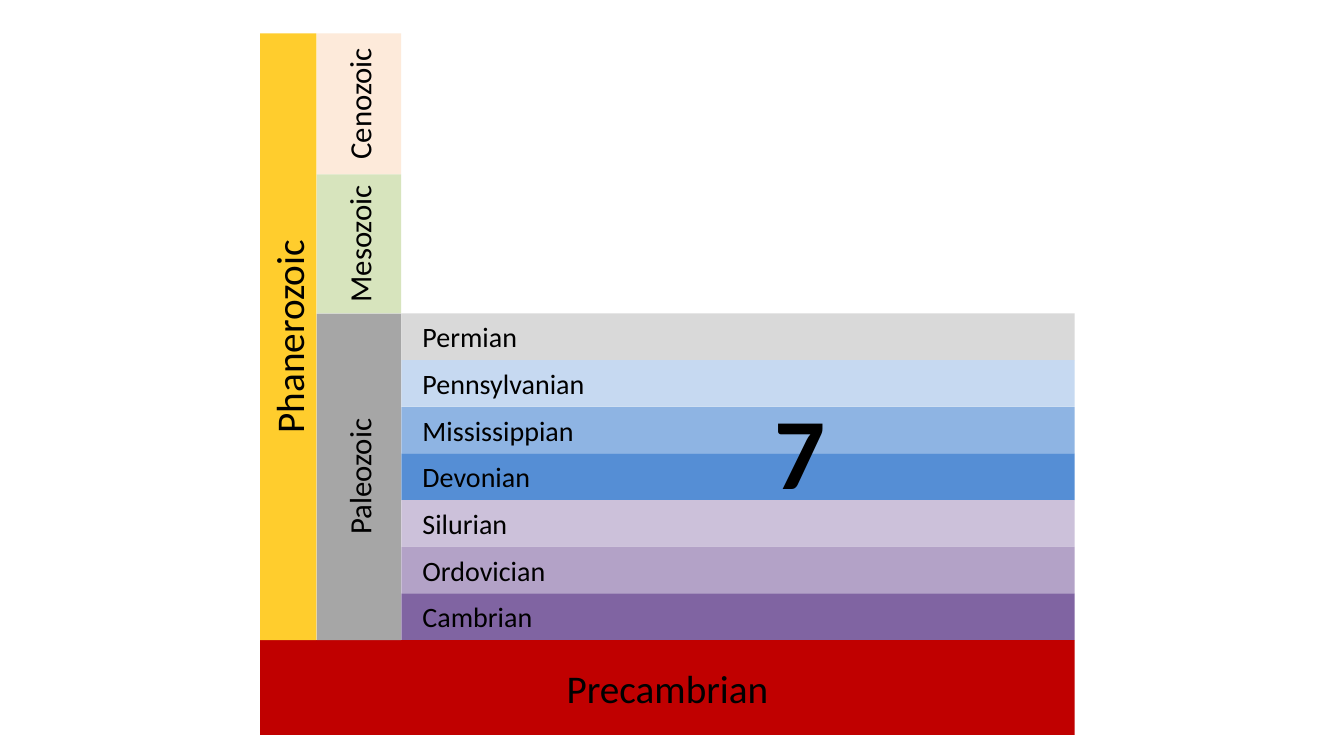
from pptx import Presentation
from pptx.dml.color import RGBColor
from pptx.enum.shapes import MSO_SHAPE
from pptx.enum.text import MSO_ANCHOR, PP_ALIGN
from pptx.util import Inches, Pt

# Content: time units from youngest to oldest
COLORS = {
    "Phanerozoic": "FFCD2D", "Precambrian": "C00000",
    "Cenozoic": "FDEADA", "Mesozoic": "D7E4BD", "Paleozoic": "A6A6A6",
    "Permian": "D9D9D9", "Pennsylvanian": "C6D9F1", "Mississippian": "8EB4E3",
    "Devonian": "558ED5", "Silurian": "CCC1DA", "Ordovician": "B3A2C7",
    "Cambrian": "8064A2", "text": "000000",
}
ERAS = ["Cenozoic", "Mesozoic", "Paleozoic"]
PERIODS = ["Permian", "Pennsylvanian", "Mississippian", "Devonian",
           "Silurian", "Ordovician", "Cambrian"]
PERIOD_COUNT = "7"

# Grid: column edges (eon, era, period) and row edges in inches
EON_X, ERA_X, PERIOD_X, RIGHT = 2.58, 3.14, 3.98, 10.66
ERA_EDGES = [0.33, 1.73, 3.11, 6.35]
TOP, PALEOZOIC_TOP, BASE = ERA_EDGES[0], ERA_EDGES[2], ERA_EDGES[3]
BOTTOM = 7.29
PERIOD_HEIGHT = (BASE - PALEOZOIC_TOP) / len(PERIODS)

FORMATS = {
    "eon": {"size": Pt(28)},
    "era": {"size": Pt(22)},
    "period": {"size": Pt(20)},
    "count": {"size": Pt(72), "bold": True},
}


def write(frame, words, style, align):
    paragraph = frame.paragraphs[0]
    paragraph.alignment = align
    run = paragraph.add_run()
    run.text = words
    run.font.name = "Calibri"
    run.font.color.rgb = RGBColor.from_string(COLORS["text"])
    for attribute, value in FORMATS[style].items():
        setattr(run.font, attribute, value)


def add_unit(slide, unit, left, top, right, bottom, style,
             align=PP_ALIGN.CENTER, upright=False):
    """Fill the given cell; an upright unit is a bar turned to read upwards."""
    width, height = right - left, bottom - top
    if upright:
        width, height = height, width
    bar = slide.shapes.add_shape(
        MSO_SHAPE.RECTANGLE,
        Inches((left + right - width) / 2), Inches((top + bottom - height) / 2),
        Inches(width), Inches(height))
    bar.rotation = 270 if upright else 0
    bar.shadow.inherit = False
    bar.fill.solid()
    bar.fill.fore_color.rgb = RGBColor.from_string(COLORS[unit])
    bar.line.fill.background()
    bar.text_frame.vertical_anchor = MSO_ANCHOR.MIDDLE
    bar.text_frame.word_wrap = True
    if align == PP_ALIGN.LEFT:
        bar.text_frame.margin_left = Inches(0.21)
    write(bar.text_frame, unit, style, align)


def main():
    deck = Presentation()
    deck.slide_width, deck.slide_height = Inches(13.33), Inches(7.5)
    slide = deck.slides.add_slide(deck.slide_layouts[6])

    # Periods of the Paleozoic
    for row, period in enumerate(PERIODS):
        top = PALEOZOIC_TOP + row * PERIOD_HEIGHT
        add_unit(slide, period, PERIOD_X, top, RIGHT, top + PERIOD_HEIGHT,
                 "period", PP_ALIGN.LEFT)

    # Precambrian base, eras and eon
    add_unit(slide, "Precambrian", EON_X, BASE, RIGHT, BOTTOM, "eon")
    for era, top, bottom in zip(ERAS, ERA_EDGES, ERA_EDGES[1:]):
        add_unit(slide, era, ERA_X, top, PERIOD_X, bottom, "era", upright=True)
    add_unit(slide, "Phanerozoic", EON_X, TOP, ERA_X, BASE, "eon", upright=True)

    # Number of periods
    count = slide.shapes.add_textbox(Inches(7.58), Inches(3.81),
                                     Inches(1.92), Inches(1.31))
    count.text_frame.word_wrap = True
    write(count.text_frame, PERIOD_COUNT, "count", PP_ALIGN.LEFT)

    deck.save("out.pptx")


if __name__ == "__main__":
    main()
